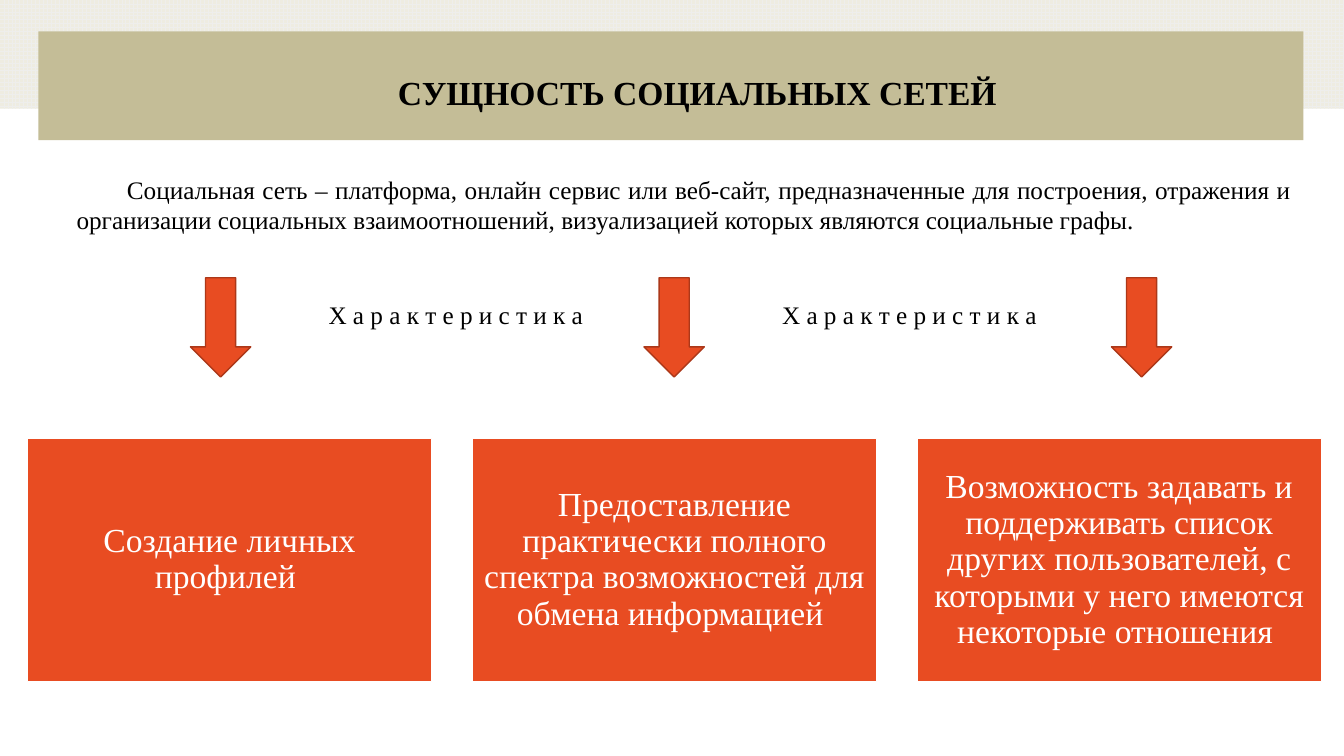
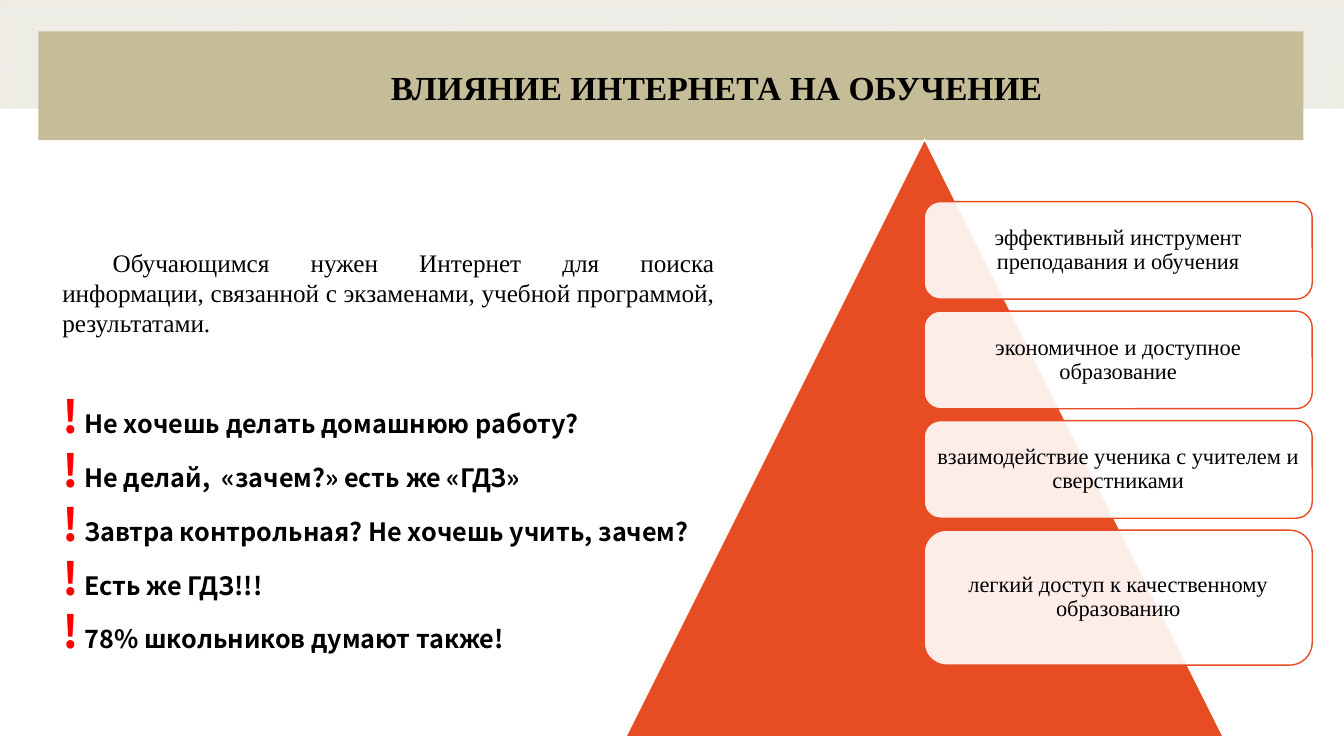
from dataclasses import dataclass

from lxml.etree import SubElement
from pptx import Presentation
from pptx.dml.color import RGBColor
from pptx.enum.dml import MSO_PATTERN
from pptx.enum.shapes import MSO_SHAPE
from pptx.enum.text import MSO_ANCHOR, PP_ALIGN
from pptx.oxml.ns import qn
from pptx.util import Cm, Pt


@dataclass(frozen=True)
class Theme:
    # Colours
    black: str = "000000"
    white: str = "FFFFFF"
    orange: str = "E84C22"
    dark_orange: str = "AC3819"
    red: str = "FF0000"
    khaki: str = "C4BD97"
    grid: str = "EEEEEC"
    grid_back: str = "EEECE1"
    # Fonts and type sizes
    serif: str = "Times New Roman"
    sans: str = "Noto Sans CJK JP"
    title_size: int = 24
    card_size: int = 24
    body_size: int = 18
    benefit_size: int = 16
    mark_size: int = 32


THEME = Theme()
WIDTH, HEIGHT = 33.87, 19.05


def rgb(colour):
    return RGBColor.from_string(colour)


class Deck:
    """Holds the style and the slide being built; lengths are centimetres."""

    def __init__(self, theme):
        self.theme = theme
        self.presentation = Presentation()
        self.presentation.slide_width = Cm(WIDTH)
        self.presentation.slide_height = Cm(HEIGHT)
        self.slide = None

    def new_slide(self, title, left, top, width):
        """Start a slide with its backdrop, title bar and title."""
        theme = self.theme
        self.slide = self.presentation.slides.add_slide(
            self.presentation.slide_layouts[6])
        backdrop = self.shape(MSO_SHAPE.RECTANGLE, 0, 0, WIDTH, 2.74, theme.grid)
        backdrop.fill.patterned()
        backdrop.fill.pattern = MSO_PATTERN.LARGE_GRID
        backdrop.fill.fore_color.rgb = rgb(theme.grid)
        backdrop.fill.back_color.rgb = rgb(theme.grid_back)
        self.shape(MSO_SHAPE.RECTANGLE, 0.97, 0.79, 31.88, 2.74, theme.khaki)
        box = self.text(title, left, top, width, 1.27, theme.title_size, bold=True)
        box.text_frame.word_wrap = False

    def shape(self, kind, left, top, width, height, fill, line=None, opacity=None):
        shape = self.slide.shapes.add_shape(
            kind, Cm(left), Cm(top), Cm(width), Cm(height))
        shape.shadow.inherit = False
        shape.fill.solid()
        shape.fill.fore_color.rgb = rgb(fill)
        if opacity is not None:
            colour = next(shape.element.iter(qn("a:srgbClr")))
            SubElement(colour, qn("a:alpha"), val=str(opacity * 1000))
        if line:
            shape.line.color.rgb = rgb(line)
            shape.line.width = Pt(1)
        else:
            shape.line.fill.background()
        return shape

    def style(self, run, size, colour, font=None, bold=False):
        run.font.name = font or self.theme.serif
        run.font.size = Pt(size)
        run.font.bold = bold
        run.font.color.rgb = rgb(colour)

    def text(self, text, left, top, width, height, size, bold=False):
        box = self.slide.shapes.add_textbox(
            Cm(left), Cm(top), Cm(width), Cm(height))
        frame = box.text_frame
        frame.word_wrap = True
        frame.text = text
        for run in frame.paragraphs[0].runs:
            self.style(run, size, self.theme.black, bold=bold)
        return box

    def lead(self, text, left, top, width, height):
        """Justified paragraph with a first-line indent."""
        box = self.text(text, left, top, width, height, self.theme.body_size)
        paragraph = box.text_frame.paragraphs[0]
        paragraph.alignment = PP_ALIGN.JUSTIFY
        paragraph._p.get_or_add_pPr().set("indent", str(Cm(1.27)))

    def label(self, shape, text, size, colour, inset):
        """Centred text inside a shape."""
        frame = shape.text_frame
        frame.word_wrap = True
        frame.vertical_anchor = MSO_ANCHOR.MIDDLE
        frame.margin_left = frame.margin_right = Cm(inset)
        frame.margin_top = frame.margin_bottom = Cm(inset)
        frame.text = text
        paragraph = frame.paragraphs[0]
        paragraph.alignment = PP_ALIGN.CENTER
        paragraph.line_spacing = 0.9
        self.style(paragraph.runs[0], size, colour)

    def card(self, text, left, top, width, height):
        theme = self.theme
        card = self.shape(MSO_SHAPE.RECTANGLE, left, top, width, height,
                          theme.orange, theme.white)
        self.label(card, text, theme.card_size, theme.white, 0.25)

    def benefit(self, text, left, top, width, height):
        theme = self.theme
        box = self.shape(MSO_SHAPE.ROUNDED_RECTANGLE, left, top, width, height,
                         theme.white, theme.orange, opacity=90)
        # The rounded corners already add their own inset
        self.label(box, text, theme.benefit_size, theme.black, 0.18)

    def marked_list(self, items, left, top, width, height):
        """Bold lines, each opened by a large red exclamation mark."""
        theme = self.theme
        box = self.slide.shapes.add_textbox(
            Cm(left), Cm(top), Cm(width), Cm(height))
        frame = box.text_frame
        frame.word_wrap = True
        frame.text = "\n".join("!" for _ in items)
        for paragraph, item in zip(frame.paragraphs, items):
            self.style(paragraph.runs[0], theme.mark_size, theme.red,
                       theme.sans, bold=True)
            run = paragraph.add_run()
            run.text = f" {item}"
            self.style(run, theme.body_size, theme.black, theme.sans, bold=True)


def build_essence(deck):
    deck.new_slide("СУЩНОСТЬ СОЦИАЛЬНЫХ СЕТЕЙ", 9.78, 1.68, 15.75)

    # Feature cards
    features = (
        "Создание личных профилей ",
        "Предоставление практически полного спектра возможностей "
        "для обмена информацией ",
        "Возможность задавать и поддерживать список других пользователей, "
        "с которыми у него имеются некоторые отношения ",
    )
    card_width, card_gap = 10.19, 1.02
    for index, feature in enumerate(features):
        deck.card(feature, 0.69 + index * (card_width + card_gap), 11.05,
                  card_width, 6.12)

    # Definition
    deck.lead("Социальная сеть – платформа, онлайн сервис или веб-сайт, "
              "предназначенные для построения, отражения и организации "
              "социальных взаимоотношений, визуализацией которых являются "
              "социальные графы. ", 1.68, 4.27, 31.12, 1.8)

    # Arrows to the cards and the captions between them
    for left in (4.8, 16.23, 28.01):
        deck.shape(MSO_SHAPE.DOWN_ARROW, left, 7, 1.52, 2.5,
                   THEME.orange, THEME.dark_orange)
    for left in (8.03, 19.46):
        deck.text("Х а р а к т е р и с т и к а", left, 7.42, 12.14, 1.02,
                  THEME.body_size)


def build_influence(deck):
    deck.new_slide("ВЛИЯНИЕ ИНТЕРНЕТА НА ОБУЧЕНИЕ", 9.6, 1.57, 17.3)

    # Pyramid with the benefits stacked over it
    deck.shape(MSO_SHAPE.ISOSCELES_TRIANGLE, 15.77, 3.51, 15.06, 15.06,
               THEME.orange, THEME.white)
    benefits = (
        ("эффективный инструмент преподавания и обучения", 2.46),
        ("экономичное и доступное образование", 2.46),
        ("взаимодействие ученика с учителем и сверстниками", 2.46),
        ("легкий доступ к качественному образованию", 3.4),
    )
    top, gap = 5.08, 0.3
    for benefit, height in benefits:
        deck.benefit(benefit, 23.29, top, 9.78, height)
        top += height + gap

    # Why learners need the Internet
    deck.lead("Обучающимся нужен Интернет для поиска информации, связанной "
              "с экзаменами, учебной программой, результатами. ",
              1.32, 6.1, 16.94, 2.57)
    deck.marked_list((
        "Не хочешь делать домашнюю работу?",
        "Не делай,  «зачем?» есть же «ГДЗ»",
        "Завтра контрольная? Не хочешь учить, зачем?",
        "Есть же ГДЗ!!!",
        "78% школьников думают также!",
    ), 1.32, 9.68, 17.58, 7.87)


def main():
    deck = Deck(THEME)
    build_essence(deck)
    build_influence(deck)
    deck.presentation.save("out.pptx")


if __name__ == "__main__":
    main()
